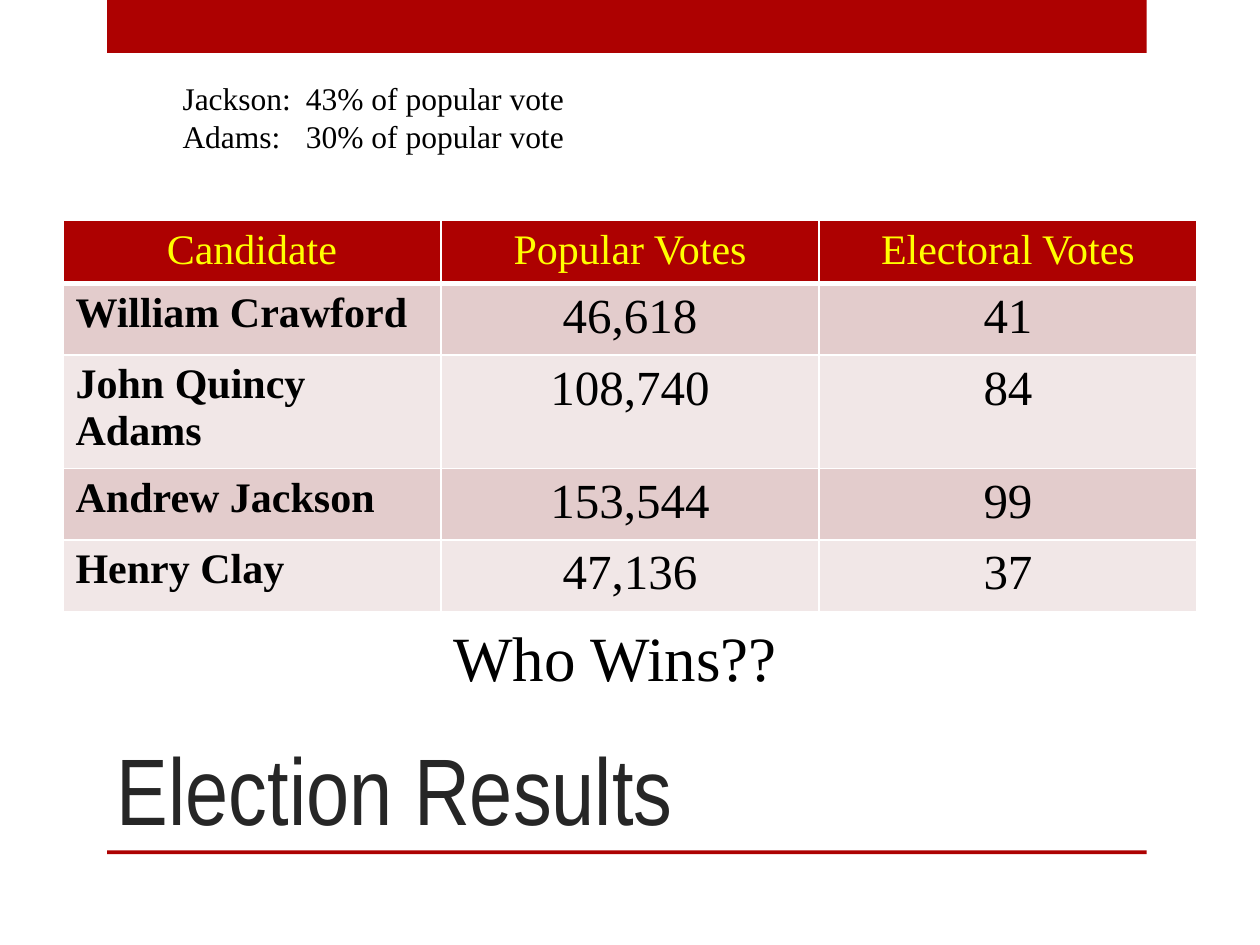
from lxml import etree
from pptx import Presentation
from pptx.dml.color import RGBColor
from pptx.enum.shapes import MSO_SHAPE
from pptx.enum.text import MSO_ANCHOR, PP_ALIGN
from pptx.oxml.ns import qn
from pptx.util import Inches, Pt

RECT = MSO_SHAPE.RECTANGLE
TOP, BOTTOM = MSO_ANCHOR.TOP, MSO_ANCHOR.BOTTOM
LEFT, CENTER = PP_ALIGN.LEFT, PP_ALIGN.CENTER
RED = RGBColor(0xAD, 0x01, 0x01)
ROSE = RGBColor(0xE3, 0xCC, 0xCC)
PALE = RGBColor(0xF1, 0xE7, 0xE7)
YELLOW = RGBColor(0xFF, 0xFF, 0x00)
WHITE = RGBColor(0xFF, 0xFF, 0xFF)
BLACK = RGBColor(0, 0, 0)
GRAY = RGBColor(0x26, 0x26, 0x26)
SERIF, NARROW = "Times New Roman", "Arial Narrow"

TITLE = "Election Results"
ASK = "Who Wins??"
SHARES = ["Jackson:\t43% of popular vote", "Adams:\t30% of popular vote"]
VOTES = [
    ("Candidate", "Popular Votes", "Electoral Votes"),
    ("William Crawford", "46,618", "41"),
    ("John Quincy Adams", "108,740", "84"),
    ("Andrew Jackson", "153,544", "99"),
    ("Henry Clay", "47,136", "37"),
]
HEIGHTS = [0.46, 0.53, 0.84, 0.53, 0.53]
COL = 3
BARS = [(0, 0.42), (6.75, 0.03)]
TAB = 0.98


def write(para, text, size, color, font=SERIF, bold=False, align=LEFT):
    para.alignment = align
    run = para.add_run()
    run.text = text
    run.font.name = font
    run.font.size = Pt(size)
    run.font.bold = bold
    run.font.color.rgb = color


def add_text(slide, box, lines, size, color, font=SERIF, anchor=TOP):
    frame = slide.shapes.add_textbox(*map(Inches, box)).text_frame
    frame.word_wrap = True
    frame.vertical_anchor = anchor
    for i, line in enumerate(lines):
        para = frame.add_paragraph() if i else frame.paragraphs[0]
        write(para, line, size, color, font)
    return frame


def add_bar(slide, top, height):
    bar = slide.shapes.add_shape(
        RECT, *map(Inches, (0.85, top, 8.25, height)))
    bar.shadow.inherit = False
    bar.fill.solid()
    bar.fill.fore_color.rgb = RED
    bar.line.fill.background()


def set_tab(para):
    tabs = etree.SubElement(para._p.get_or_add_pPr(), qn("a:tabLst"))
    etree.SubElement(tabs, qn("a:tab"), pos=str(Inches(TAB)), algn="l")


def set_edges(cell, head):
    props = cell._tc.get_or_add_tcPr()
    for i, side in enumerate(("lnL", "lnR", "lnT", "lnB")):
        width = 3 if head and side == "lnB" else 1
        line = etree.Element(qn("a:" + side), w=str(Pt(width)))
        fill = etree.SubElement(line, qn("a:solidFill"))
        etree.SubElement(fill, qn("a:srgbClr"), val=str(WHITE))
        props.insert(i, line)


def add_votes(slide):
    box = map(Inches, (0.5, 1.75, COL * len(VOTES[0]), sum(HEIGHTS)))
    table = slide.shapes.add_table(len(VOTES), len(VOTES[0]), *box).table
    for col in table.columns:
        col.width = Inches(COL)
    for r, row in enumerate(VOTES):
        table.rows[r].height = Inches(HEIGHTS[r])
        head = r == 0
        for c, text in enumerate(row):
            cell = table.cell(r, c)
            name = c == 0 and not head
            cell.fill.solid()
            cell.fill.fore_color.rgb = RED if head else (PALE, ROSE)[r % 2]
            write(cell.text_frame.paragraphs[0], text,
                  24 if head or name else 28,
                  YELLOW if head else BLACK,
                  bold=name, align=LEFT if name else CENTER)
            set_edges(cell, head)


def main():
    deck = Presentation()
    deck.slide_width, deck.slide_height = Inches(10), Inches(7.5)
    slide = deck.slides.add_slide(deck.slide_layouts[6])
    for top, height in BARS:
        add_bar(slide, top, height)
    add_text(slide, (0.83, 5, 7.42, 1.75), [TITLE], 54, GRAY, NARROW, BOTTOM)
    add_votes(slide)
    add_text(slide, (3.5, 4.86, 6.5, 0.71), [ASK], 36, BLACK)
    notes = add_text(slide, (1.35, 0.58, 4.28, 0.71), SHARES, 18, BLACK)
    for para in notes.paragraphs:
        set_tab(para)
    deck.save("out.pptx")


if __name__ == "__main__":
    main()
